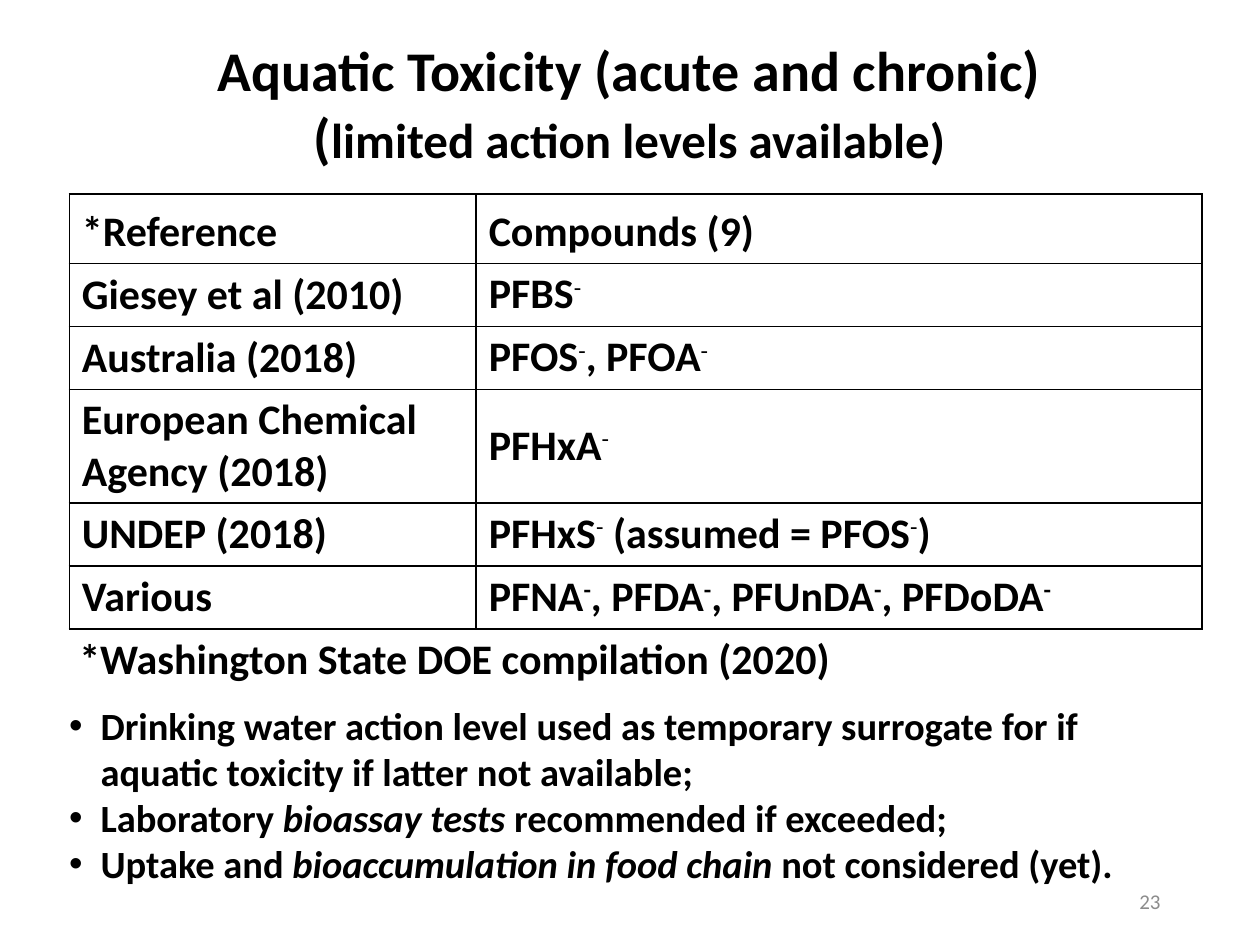
from lxml import etree
from pptx import Presentation
from pptx.dml.color import RGBColor
from pptx.enum.text import MSO_ANCHOR, MSO_AUTO_SIZE, PP_ALIGN
from pptx.oxml.ns import qn
from pptx.util import Pt

TOP, MIDDLE, BOTTOM = MSO_ANCHOR.TOP, MSO_ANCHOR.MIDDLE, MSO_ANCHOR.BOTTOM
LEFT, CENTER, RIGHT = PP_ALIGN.LEFT, PP_ALIGN.CENTER, PP_ALIGN.RIGHT
GROW, FIXED = MSO_AUTO_SIZE.SHAPE_TO_FIT_TEXT, MSO_AUTO_SIZE.NONE
BLACK, GRAY = "000000", "8C8C8C"


def color(value):
    return RGBColor.from_string(value)


class Page:
    """Holds the text style and the slide being built."""

    style = {"name": "Calibri", "bold": True}

    def __init__(self, deck):
        self.slide = deck.slides.add_slide(deck.slide_layouts[6])

    def span(self, para, text, size, ink=BLACK, baseline=None, **changes):
        span = para.add_run()
        span.text = text
        for name, value in {**self.style, "size": Pt(size), **changes}.items():
            setattr(span.font, name, value)
        span.font.color.rgb = color(ink)
        if baseline:
            span._r.get_or_add_rPr().set("baseline", str(baseline))

    def marked(self, para, text, size, **mark):
        """Every second part between bars gets the mark format."""
        for index, part in enumerate(text.split("|")):
            if part:
                self.span(para, part, size, **(mark if index % 2 else {}))

    def box(self, left, top, width, height, anchor=TOP, auto_size=GROW):
        box = self.slide.shapes.add_textbox(Pt(left), Pt(top), Pt(width), Pt(height))
        frame = box.text_frame
        options = {"word_wrap": True, "auto_size": auto_size, "vertical_anchor": anchor}
        for name, value in options.items():
            setattr(frame, name, value)
        return frame

    def paragraphs(self, frame, count, align=LEFT):
        for index in range(count):
            para = frame.add_paragraph() if index else frame.paragraphs[0]
            para.alignment = align
            yield para

    def bullet(self, para, indent):
        props = para._p.get_or_add_pPr()
        props.set("marL", str(Pt(indent)))
        props.set("indent", str(-Pt(indent)))
        etree.SubElement(props, qn("a:buFont"), typeface="Arial")
        etree.SubElement(props, qn("a:buChar"), char="•")

    def borders(self, cell, width):
        props = cell._tc.get_or_add_tcPr()
        for index, side in enumerate(("lnL", "lnR", "lnT", "lnB")):
            line = etree.Element(qn(f"a:{side}"), w=str(Pt(width)))
            fill = etree.SubElement(line, qn("a:solidFill"))
            etree.SubElement(fill, qn("a:srgbClr"), val=BLACK)
            props.insert(index, line)

    def table(self, left, top, widths, heights, rows, size):
        table = self.slide.shapes.add_table(
            len(rows), len(widths), Pt(left), Pt(top),
            Pt(sum(widths)), Pt(sum(heights))).table
        table.first_row = table.horz_banding = False
        for column, width in zip(table.columns, widths):
            column.width = Pt(width)
        for row, height, (anchors, bold_sign, texts) in zip(table.rows, heights, rows):
            row.height = Pt(height)
            for cell, anchor, text in zip(row.cells, anchors, texts):
                cell.fill.background()
                cell.vertical_anchor = anchor
                cell.margin_top = cell.margin_bottom = Pt(3.3)
                self.marked(cell.text_frame.paragraphs[0], text, size,
                            baseline=30000, bold=bold_sign)
                self.borders(cell, 1)


# Rows: anchors, whether the raised signs are bold, texts (raised between bars)
ROWS = [
    ((BOTTOM, BOTTOM), True, ("*Reference", "Compounds (9)")),
    ((MIDDLE, TOP), False, ("Giesey et al (2010)", "PFBS|-|")),
    ((MIDDLE, TOP), False, ("Australia (2018)", "PFOS|-|, PFOA|-|")),
    ((MIDDLE, MIDDLE), False, ("European Chemical Agency (2018)", "PFHxA|-|")),
    ((MIDDLE, MIDDLE), False, ("UNDEP (2018)", "PFHxS|-| (assumed = PFOS|-|)")),
    ((MIDDLE, MIDDLE), True,
     ("Various", "PFNA|-|, PFDA|-|, PFUnDA|-|, PFDoDA|-|")),
]
BULLETS = [
    "Drinking water action level used as temporary surrogate for if "
    "aquatic toxicity if latter not available;",
    "Laboratory |bioassay tests |recommended if exceeded;",
    "Uptake and |bioaccumulation in food chain |not considered (yet).",
]


def main():
    deck = Presentation()
    deck.slide_width, deck.slide_height = Pt(720), Pt(540)
    page = Page(deck)

    # Source note under the table
    note = page.box(38.2, 357.8, 641.5, 36)
    page.span(note.paragraphs[0], "*Washington State DOE compilation (2020)", 24)

    # Table of references and compounds
    page.table(39.6, 110.9, (232.5, 414.7), (39.6, 36, 36, 64.8, 36, 36), ROWS, 24)

    # Bullets
    remarks = page.box(32.4, 397.4, 641.5, 113.8)
    for para, text in zip(page.paragraphs(remarks, len(BULLETS)), BULLETS):
        page.bullet(para, 18)
        page.marked(para, text, 22, italic=True)

    # Page number
    number = page.box(508.3, 500.4, 162, 28.8, MIDDLE, FIXED)
    for para in page.paragraphs(number, 1, RIGHT):
        page.span(para, "23", 12, GRAY, bold=False)

    # Title
    title = page.box(38.9, 16.6, 641.5, 85)
    heading, subheading = page.paragraphs(title, 2, CENTER)
    page.span(heading, "Aquatic Toxicity (acute and chronic)", 32)
    page.span(subheading, "(", 32)
    page.span(subheading, "limited action levels available)", 28)

    deck.save("out.pptx")


if __name__ == "__main__":
    main()
